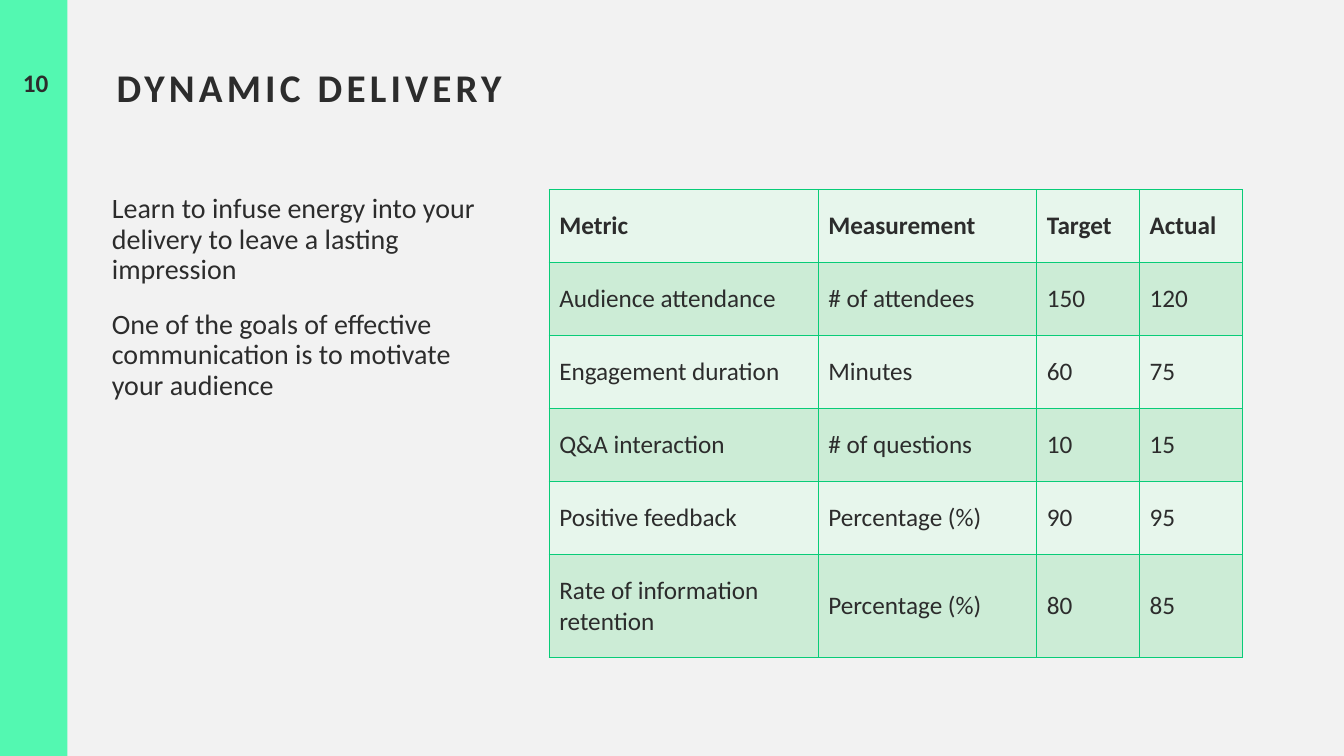
from lxml import etree
from pptx import Presentation
from pptx import util as u
from pptx.dml.color import RGBColor
from pptx.enum import shapes, text
from pptx.oxml.ns import qn

# Content
PAGE_NUMBER = "10"
HEADING = "DYNAMIC DELIVERY"
ADVICE = [
    "Learn to infuse energy into your delivery to leave a lasting impression",
    "One of the goals of effective communication is to motivate your audience",
]
METRICS = [
    ("Metric", "Measurement", "Target", "Actual"),
    ("Audience attendance", "# of attendees", "150", "120"),
    ("Engagement duration", "Minutes", "60", "75"),
    ("Q&A interaction", "# of questions", "10", "15"),
    ("Positive feedback", "Percentage (%)", "90", "95"),
    ("Rate of information retention", "Percentage (%)", "80", "85"),
]


class Theme:
    font = "Calibri"
    ink, paper, accent, border = "2C2C2C", "F2F2F2", "53F8B1", "08CC78"
    bands = ("E7F6EC", "CCECD6")
    heading, body, small = 28, 20, 18


# Layout in centimetres
SLIDE_W, SLIDE_H = 33.87, 19.05
BAND_W = 1.7
LEFT, BODY_TOP = 2.69, 4.78
TABLE_LEFT = 13.84
COLUMN_WIDTHS = (6.78, 5.51, 2.59, 2.59)
ROW_HEIGHTS = [1.84] * 5 + [2.59]


def cm(*lengths):
    return [u.Cm(length) for length in lengths]


def paint(fill, color):
    fill.solid()
    fill.fore_color.rgb = RGBColor.from_string(color)


def write(paragraph, words, size, bold=False, **formats):
    run = paragraph.add_run()
    run.text = words
    for name, value in {"name": Theme.font, "size": u.Pt(size), "bold": bold}.items():
        setattr(run.font, name, value)
    run.font.color.rgb = RGBColor.from_string(Theme.ink)
    for name, value in formats.items():
        setattr(paragraph, name, value)
    return run


def add_text(box, lines, size, bold=False, insets=None, **formats):
    frame = slide.shapes.add_textbox(*cm(*box)).text_frame
    frame.word_wrap = True
    for name, value in (insets or {}).items():
        setattr(frame, name, value)
    runs = []
    for index, line in enumerate(lines):
        paragraph = frame.add_paragraph() if index else frame.paragraphs[0]
        runs.append(write(paragraph, line, size, bold, **formats))
    return runs


def outline(cell):
    properties = cell._tc.get_or_add_tcPr()
    for index, side in enumerate(("lnL", "lnR", "lnT", "lnB")):
        line = etree.Element(qn("a:" + side), w=str(u.Pt(1)))
        fill = etree.SubElement(line, qn("a:solidFill"))
        etree.SubElement(fill, qn("a:srgbClr"), val=Theme.border)
        properties.insert(index, line)


deck = Presentation()
deck.slide_width, deck.slide_height = cm(SLIDE_W, SLIDE_H)
slide = deck.slides.add_slide(deck.slide_layouts[6])
paint(slide.background.fill, Theme.paper)

# Side band and page number
band = slide.shapes.add_shape(
    shapes.MSO_SHAPE.RECTANGLE, *cm(0, 0, BAND_W, SLIDE_H))
band.shadow.inherit = False
paint(band.fill, Theme.accent)
band.line.fill.background()
add_text((0.05, 1.57, BAND_W, 1.02), [PAGE_NUMBER], Theme.small, True,
         alignment=text.PP_ALIGN.CENTER)

# Heading with wide letter spacing
heading, = add_text((LEFT, 1.7, 28.63, 2.97), [HEADING], Theme.heading, True,
                    line_spacing=0.8)
heading._r.get_or_add_rPr().set("spc", "300")

# Advice
add_text((LEFT, BODY_TOP, 10.03, 11.76), ADVICE, Theme.body,
         insets={"margin_left": u.Cm(0.13)},
         line_spacing=0.9, space_before=u.Pt(6), space_after=u.Pt(12))

# Metrics table
metrics = slide.shapes.add_table(
    len(METRICS), len(COLUMN_WIDTHS),
    *cm(TABLE_LEFT, BODY_TOP, sum(COLUMN_WIDTHS), sum(ROW_HEIGHTS))).table
for column, width in zip(metrics.columns, COLUMN_WIDTHS):
    column.width = u.Cm(width)
for row_index, (row, height) in enumerate(zip(metrics.rows, ROW_HEIGHTS)):
    row.height = u.Cm(height)
    for cell, value in zip(row.cells, METRICS[row_index]):
        cell.vertical_anchor = text.MSO_ANCHOR.MIDDLE
        paint(cell.fill, Theme.bands[row_index % 2])
        outline(cell)
        write(cell.text_frame.paragraphs[0], value, Theme.small, row_index == 0)

deck.save("out.pptx")
